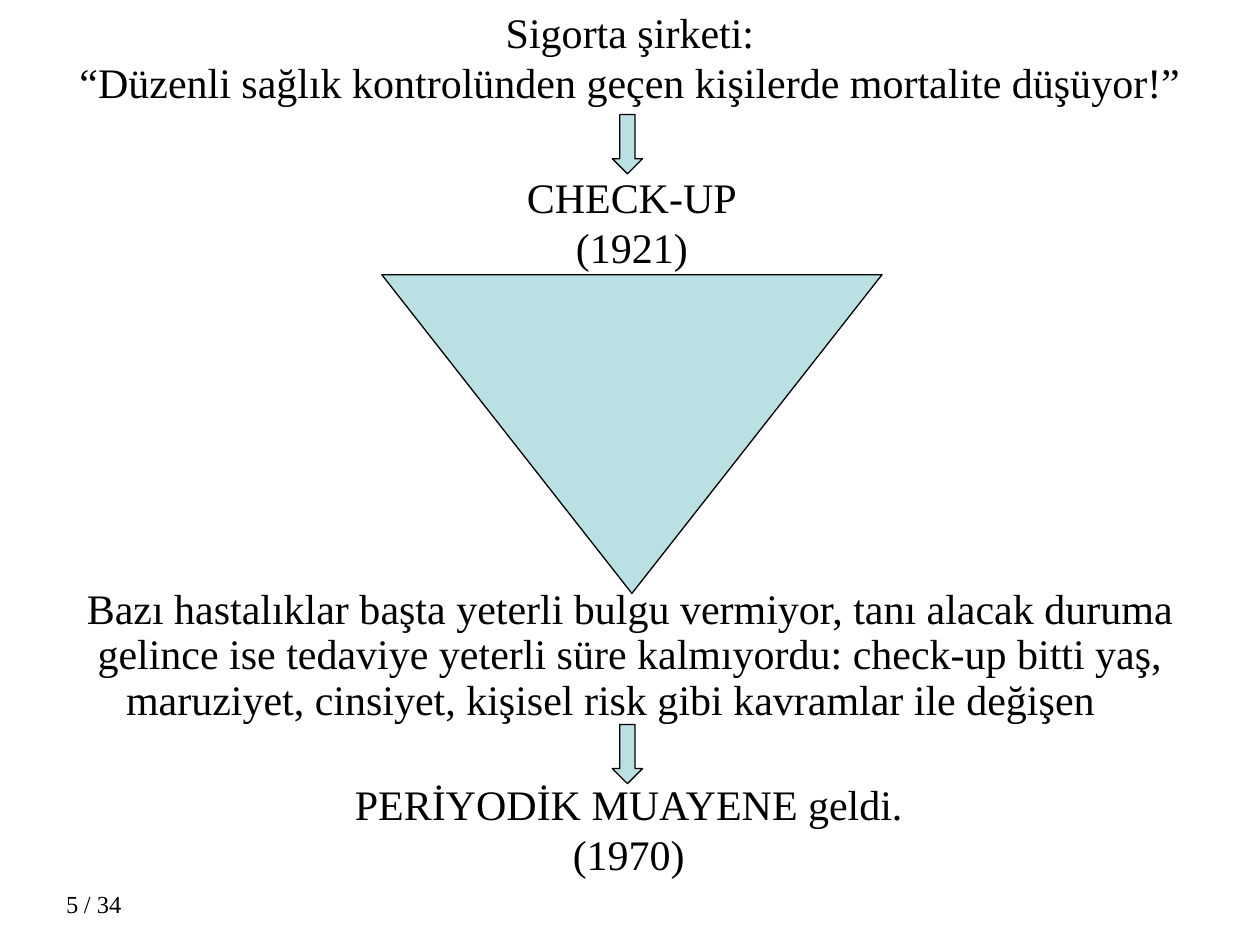
from pptx import Presentation
from pptx.dml.color import RGBColor
from pptx.enum.shapes import MSO_SHAPE as Shape
from pptx.enum.text import MSO_AUTO_SIZE as AutoSize, PP_ALIGN as Align
from pptx.util import Inches, Pt

FONT = "Times New Roman"
BLACK = "000000"
PALE_TEAL = "BBE0E3"


def color(hex_value):
    return RGBColor.from_string(hex_value)


def add_text(page, lines, left, top, width, height, size=24,
             align=Align.CENTER, wrap=True, grow=True, line_spacing=None):
    box = page.shapes.add_textbox(Inches(left), Inches(top), Inches(width), Inches(height))
    frame = box.text_frame
    frame.text = "\n".join(lines)
    frame.word_wrap = wrap
    frame.auto_size = AutoSize.SHAPE_TO_FIT_TEXT if grow else AutoSize.NONE
    for para in frame.paragraphs:
        para.alignment = align
        para.line_spacing = line_spacing
        para.font.name = FONT
        para.font.size = Pt(size)
        for span in para.runs:
            span.font.name = FONT
            span.font.size = Pt(size)
            span.font.color.rgb = color(BLACK)


def add_shape(page, kind, left, top, width, height):
    shape = page.shapes.add_shape(
        kind, Inches(left), Inches(top), Inches(width), Inches(height))
    shape.shadow.inherit = False
    shape.fill.solid()
    shape.fill.fore_color.rgb = color(PALE_TEAL)
    shape.line.color.rgb = color(BLACK)
    shape.line.width = Pt(0.75)
    return shape


def add_page_number(page, number, total):
    add_text(page, [f"/ {total}"], 0.42, 7.01, 0.79, 0.52, size=14, grow=False)
    add_text(page, [str(number)], 0.04, 7.01, 0.68, 0.52, size=14,
             align=Align.RIGHT, grow=False)


def main():
    deck = Presentation()
    deck.slide_width, deck.slide_height = Inches(10), Inches(7.5)
    page = deck.slides.add_slide(deck.slide_layouts[6])

    add_page_number(page, 5, 34)
    triangle = add_shape(page, Shape.ISOSCELES_TRIANGLE, 3.03, 2.18, 3.97, 2.53)
    triangle.rotation = 180

    add_text(page, ["Sigorta şirketi:",
                    "“Düzenli sağlık kontrolünden geçen kişilerde mortalite düşüyor!”"],
             0, 0, 10, 0.9)
    add_text(page, ["CHECK-UP", "(1921)"], 4.08, 1.31, 1.87, 0.9, wrap=False)
    add_text(page, ["PERİYODİK MUAYENE geldi.", "(1970)"], 2.7, 6.13, 4.58, 0.9, wrap=False)
    add_text(page, ["Bazı hastalıklar başta yeterli bulgu vermiyor, tanı alacak duruma "
                    "gelince ise tedaviye yeterli süre kalmıyordu: check-up bitti yaş, "
                    "maruziyet, cinsiyet, kişisel risk gibi kavramlar ile değişen\t"],
             0.51, 4.62, 8.98, 1.18, line_spacing=0.9)

    for top in (0.91, 5.75):
        add_shape(page, Shape.DOWN_ARROW, 4.86, top, 0.24, 0.47)

    deck.save("out.pptx")


if __name__ == "__main__":
    main()
